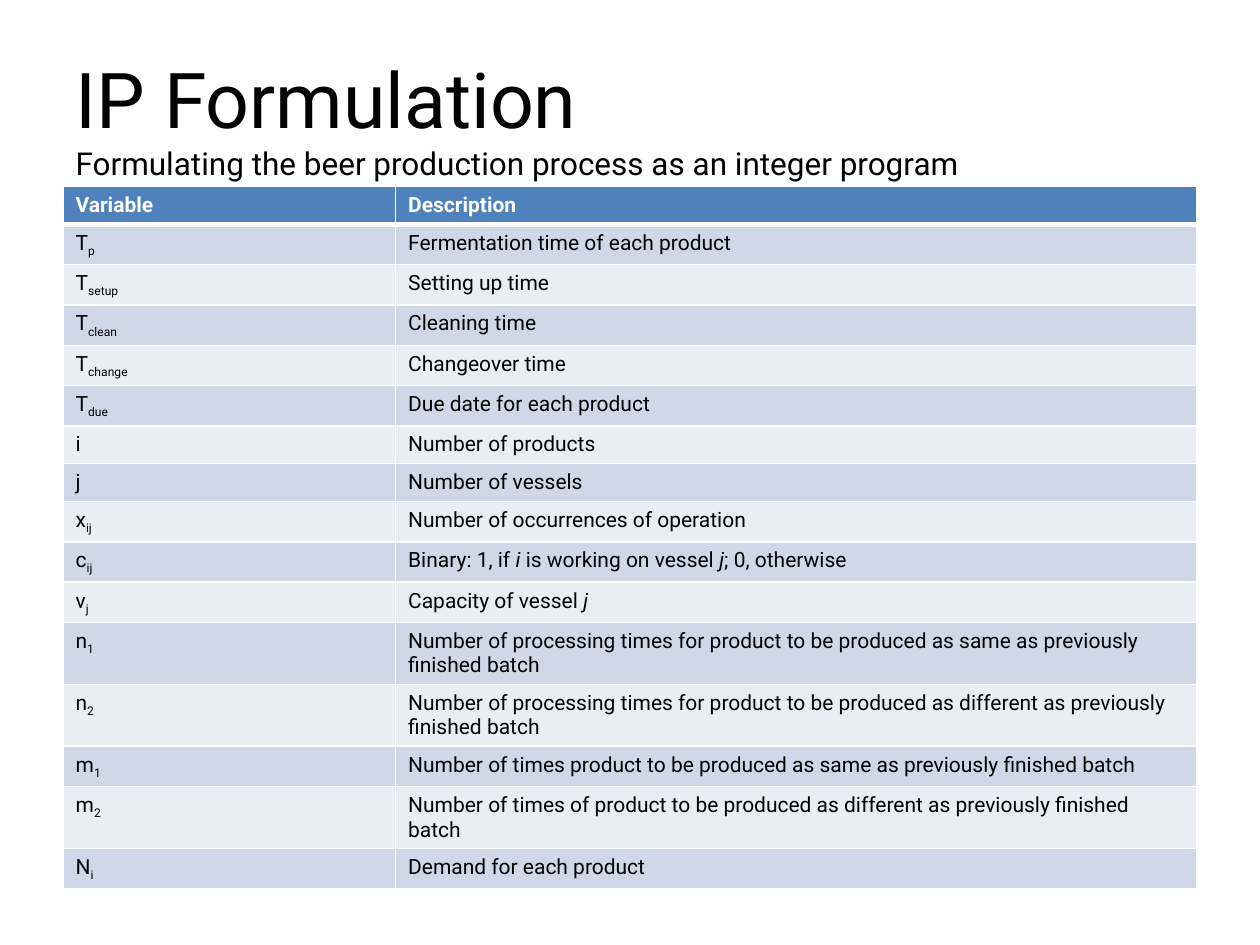
import pptx
import pptx.util
import pptx.dml.color
import pptx.enum.text
import pptx.oxml
import pptx.oxml.ns

VARIABLES = [  # "_" starts a subscript, "*" switches italics
    ("T_p", "Fermentation time of each product"),
    ("T_setup", "Setting up time"),
    ("T_clean", "Cleaning time"),
    ("T_change", "Changeover time"),
    ("T_due", "Due date for each product"),
    ("i", "Number of products"),
    ("j", "Number of vessels"),
    ("x_ij", "Number of occurrences of operation"),
    ("c_ij", "Binary: 1, if *i* is working on vessel *j*; 0, otherwise"),
    ("v_j", "Capacity of vessel *j*"),
    ("n_1", "Number of processing times for product to be produced "
            "as same as previously finished batch"),
    ("n_2", "Number of processing times for product to be produced "
            "as different as previously finished batch"),
    ("m_1", "Number of times product to be produced "
            "as same as previously finished batch"),
    ("m_2", "Number of times of product to be produced "
            "as different as previously finished batch"),
    ("N_i", "Demand for each product"),
]


def colour(hex_string):
    return pptx.dml.color.RGBColor.from_string(hex_string)


def add_text(para, text, size=12, fill="000000", bold=False, italic=False,
             subscript=False, font="Roboto"):
    span = para.add_run()
    span.text = text
    span.font.name = font
    span.font.size = pptx.util.Pt(size)
    span.font.bold = bold
    span.font.italic = italic
    span.font.color.rgb = colour(fill)
    if subscript:
        span.font._element.set("baseline", "-25000")


def add_symbol(para, symbol):
    base, _, index = symbol.partition("_")
    add_text(para, base)
    if index:
        add_text(para, index, subscript=True)


def add_description(para, description):
    for number, part in enumerate(description.split("*")):
        if part:
            add_text(para, part, italic=number % 2 == 1)


class Page:
    """Holds the style and the current slide; lengths are shares of its size."""
    header_fill = "4F81BD"
    band_fills = ("D0D8E8", "E9EDF4")
    line_fill = "FFFFFF"

    def __init__(self, deck):
        self.width, self.height = deck.slide_width, deck.slide_height
        self.slide = deck.slides.add_slide(deck.slide_layouts[5])

    def area(self, left, top, width, height):
        return (round(left * self.width), round(top * self.height),
                round(width * self.width), round(height * self.height))

    def title(self, heading, subheading, area):
        box = self.slide.shapes.title
        box.left, box.top, box.width, box.height = self.area(*area)
        frame = box.text_frame
        frame.auto_size = pptx.enum.text.MSO_AUTO_SIZE.NONE
        frame.vertical_anchor = pptx.enum.text.MSO_ANCHOR.MIDDLE
        add_text(frame.paragraphs[0], heading, size=44)
        add_text(frame.add_paragraph(), subheading, size=18)
        for para in frame.paragraphs:
            para.alignment = pptx.enum.text.PP_ALIGN.LEFT

    def table(self, headers, rows, area, column_shares):
        table = self.slide.shapes.add_table(
            len(rows) + 1, len(headers), *self.area(*area)).table
        for column, share in zip(table.columns, column_shares):
            column.width = round(share * self.width)
        for cell, header in zip(table.rows[0].cells, headers):
            self.cell(cell, self.header_fill, bottom=3)
            add_text(cell.text_frame.paragraphs[0], header,
                     fill="FFFFFF", bold=True)
        for number, row in enumerate(rows):
            cells = table.rows[number + 1].cells
            for cell, text, write in zip(cells, row, (add_symbol, add_description)):
                self.cell(cell, self.band_fills[number % 2],
                          top=3 if number == 0 else 1)
                write(cell.text_frame.paragraphs[0], text)

    def cell(self, cell, fill, top=1, bottom=1):
        """Fill a cell and draw its borders, with widths in points."""
        cell.fill.solid()
        cell.fill.fore_color.rgb = colour(fill)
        properties = cell._tc.get_or_add_tcPr()
        sides = (("lnL", 1), ("lnR", 1), ("lnT", top), ("lnB", bottom))
        for place, (side, points) in enumerate(sides):
            properties.insert(place, pptx.oxml.parse_xml(
                f'<a:{side} {pptx.oxml.ns.nsdecls("a")} w="{pptx.util.Pt(points)}">'
                f'<a:solidFill><a:srgbClr val="{self.line_fill}"/></a:solidFill>'
                f'</a:{side}>'))


def main():
    deck = pptx.Presentation()
    deck.slide_width = pptx.util.Inches(10)
    deck.slide_height = pptx.util.Inches(7.5)
    page = Page(deck)
    page.title("IP Formulation",
               "Formulating the beer production process as an integer program",
               area=(0.05, 0.04, 0.9, 1.25 / 7.5))
    page.table(("Variable", "Description"), VARIABLES,
               area=(0.05, 1.48 / 7.5, 0.9, 0.64),
               column_shares=(0.264, 0.636))
    deck.save("out.pptx")


if __name__ == "__main__":
    main()
